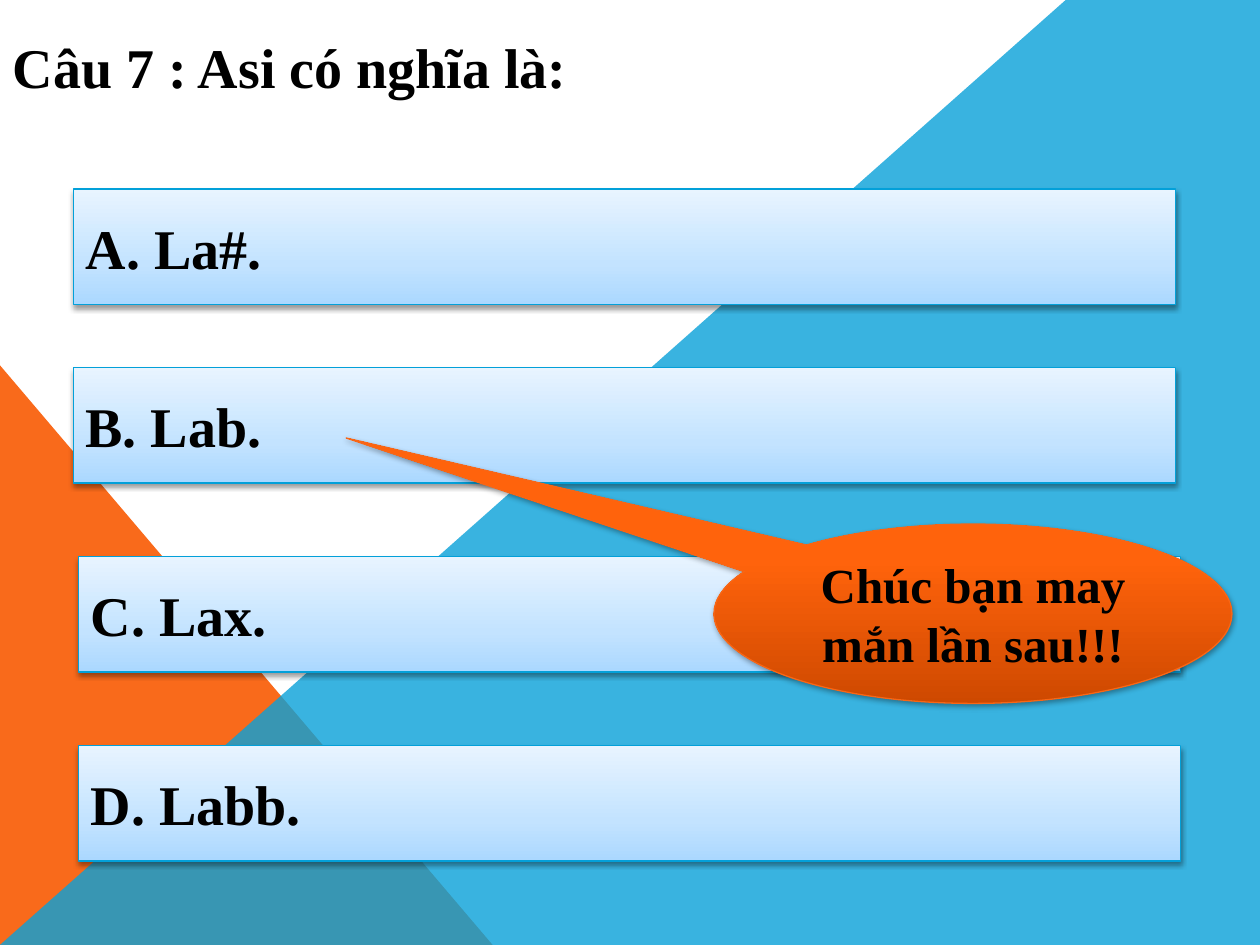
from copy import deepcopy

from lxml.etree import SubElement
from pptx import Presentation
from pptx.dml.color import RGBColor
from pptx.enum.shapes import MSO_SHAPE
from pptx.enum.text import MSO_ANCHOR, PP_ALIGN
from pptx.oxml.ns import qn
from pptx.util import Pt


def write(shape, text, size, align):
    frame = shape.text_frame
    frame.word_wrap = True
    frame.vertical_anchor = MSO_ANCHOR.MIDDLE
    para = frame.paragraphs[0]
    para.alignment = align
    span = para.add_run()
    span.text = text
    span.font.name = "Times New Roman"
    span.font.size = Pt(size)
    span.font.bold = True
    span.font.color.rgb = RGBColor.from_string("000000")


def style(shape, stops, line, shadow_alpha):
    """Give a shape a bottom-to-top gradient, a thin line and a soft shadow."""
    shape.fill.gradient()
    shape.fill.gradient_angle = 90
    stop_list = shape.element.spPr.find(qn("a:gradFill")).find(qn("a:gsLst"))
    stop_list.append(deepcopy(stop_list[-1]))
    for stop, (position, color) in zip(shape.fill.gradient_stops, stops):
        stop.position = position
        stop.color.rgb = RGBColor.from_string(color)
    shape.line.color.rgb = RGBColor.from_string(line)
    shape.line.width = Pt(0.75)
    shape.shadow.inherit = False
    effects = shape.element.spPr.find(qn("a:effectLst"))
    shadow = SubElement(effects, qn("a:outerShdw"), blurRad=str(Pt(3.1)),
                        dist=str(Pt(1.6)), dir="5400000", rotWithShape="0")
    black = SubElement(shadow, qn("a:srgbClr"), val="000000")
    SubElement(black, qn("a:alpha"), val=str(shadow_alpha * 1000))


deck = Presentation()
deck.slide_width, deck.slide_height = Pt(720), Pt(540)
page = deck.slides.add_slide(deck.slide_layouts[5])
shapes = page.shapes

# Background: orange corner under a translucent blue area
corner = shapes.add_shape(MSO_SHAPE.RIGHT_TRIANGLE, Pt(0), Pt(208.8), Pt(281.5), Pt(331.2))
builder = shapes.build_freeform(0, 540, scale=Pt(1))
builder.add_line_segments([(609, 0), (720, 0), (720, 540)], close=True)
blue_area = builder.convert_to_shape()
for shape, color in ((corner, "F96A1B"), (blue_area, "08A1D9")):
    shape.fill.solid()
    shape.fill.fore_color.rgb = RGBColor.from_string(color)
    shape.line.fill.background()
    shape.shadow.inherit = False
blue = blue_area.element.spPr.find(qn("a:solidFill"))[0]
SubElement(blue, qn("a:alpha"), val="80000")

# Question
title = shapes.title
title.left, title.top, title.width, title.height = Pt(0), Pt(0), Pt(720), Pt(76)
write(title, "Câu 7 : Asi có nghĩa là:", 32, PP_ALIGN.LEFT)

# Answers
answers = [
    ("A. La#.", 41.8, 108),
    ("B. Lab.", 41.8, 210),
    ("C. Lax.", 44.8, 318),
    ("D. Labb.", 44.8, 426),
]
for text, left, top in answers:
    answer = shapes.add_shape(MSO_SHAPE.RECTANGLE, Pt(left), Pt(top), Pt(630), Pt(66))
    style(answer, [(0, "ABD8FF"), (0.35, "C3E3FF"), (1, "E8F4FF")], "03A0D9", 38)
    write(answer, text, 32, PP_ALIGN.LEFT)

# Feedback pointing at answer B
callout = shapes.add_shape(MSO_SHAPE.OVAL_CALLOUT, Pt(408), Pt(299.5), Pt(296), Pt(102.5))
callout.adjustments[0] = -1.21
callout.adjustments[1] = -0.98
style(callout, [(0, "CE4900"), (0.8, "FF630C"), (1, "FF640E")], "F96615", 35)
write(callout, "Chúc bạn may mắn lần sau!!!", 28, PP_ALIGN.CENTER)

deck.save("out.pptx")
